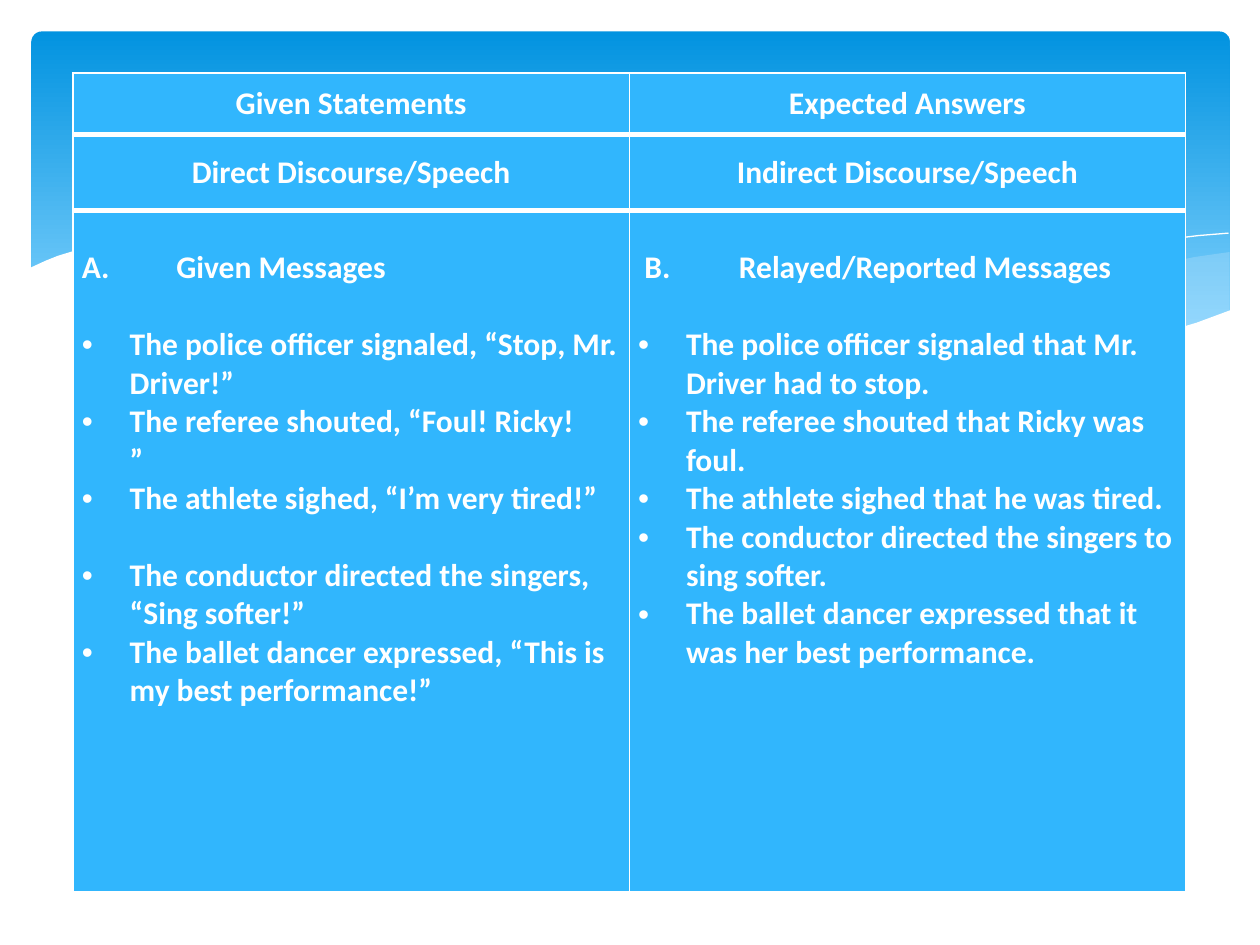
import pptx
import pptx.util
import pptx.dml.color
import pptx.enum.shapes
import pptx.enum.text
import pptx.oxml
import pptx.oxml.ns
from lxml import etree
from pptx.util import Inches

THEME = {
    "font": "Calibri", "size": 18, "text": "FFFFFF", "cell": "31B6FD",
    "band_top": "0293E0", "band_bottom": "83D3FE",
    "wave": "C6E7FC", "white": "FFFFFF", "thin": 1, "thick": 3,
}

HEADERS = [
    ("Given Statements", "Expected Answers"),
    ("Direct Discourse/Speech", "Indirect Discourse/Speech"),
]
MESSAGES = [
    {
        "heading": "A. \tGiven Messages",
        "indent": 0.25,
        "items": [
            "The police officer signaled, “Stop, Mr. Driver!”",
            "The referee shouted, “Foul! Ricky!\v”",
            "The athlete sighed, “I’m very tired!”",
            "The conductor directed the singers, “Sing softer!”",
            "The ballet dancer expressed, “This is my best performance!”",
        ],
        "gap_before": 3,
    },
    {
        "heading": "B. \tRelayed/Reported Messages",
        "indent": 0.3,
        "items": [
            "The police officer signaled that Mr. Driver had to stop.",
            "The referee shouted that Ricky was foul.",
            "The athlete sighed that he was tired.",
            "The conductor directed the singers to sing softer.",
            "The ballet dancer expressed that it was her best performance.",
        ],
        "gap_before": None,
    },
]
TABLE_BOX = (0.58, 0.58, 8.83, 6.5)
ROW_HEIGHTS = (0.49, 0.6, 5.41)
BLANK_LINE = pptx.util.Pt(22)
BULLET_INDENT = 0.38

WAVES = [
    {"fill": THEME["wave"], "opacity": 29, "points": [
        (9.76, 2), (9.48, 2.04), (9.06, 2.13), (8.61, 2.23), (8.05, 2.37),
        (7.53, 2.48), (7.06, 2.57), (6.61, 2.65), (7.05, 2.71), (7.45, 2.75),
        (7.81, 2.77), (8.14, 2.78), (8.44, 2.77), (8.72, 2.74), (8.97, 2.7),
        (9.21, 2.65), (9.42, 2.59), (9.63, 2.52), (9.76, 2.47)]},
    {"fill": THEME["wave"], "opacity": 40, "points": [
        (8.93, 2.73), (8.37, 2.65), (7.75, 2.54), (7.06, 2.4), (6.29, 2.22),
        (5.84, 2.11), (5.41, 2.03), (5.02, 1.96), (4.42, 1.89), (3.99, 1.86),
        (3.61, 1.85), (3.28, 1.87), (2.86, 1.91), (3.42, 1.99), (4.04, 2.11),
        (4.49, 2.22), (5.3, 2.4), (6.01, 2.55), (6.5, 2.64), (6.95, 2.7),
        (7.36, 2.75), (7.73, 2.77), (8.07, 2.78), (8.48, 2.77)]},
    {"line": THEME["white"], "points": [
        (3.09, 1.95), (3.44, 1.9), (3.87, 1.87), (4.33, 1.87), (4.89, 1.9),
        (5.56, 1.97), (6.08, 2.04), (6.65, 2.13), (7.27, 2.26), (7.95, 2.41),
        (8.69, 2.61), (9.07, 2.72)]},
    {"line": THEME["white"], "points": [
        (6.13, 2.57), (6.53, 2.46), (6.95, 2.35), (7.48, 2.23), (8.06, 2.1),
        (8.66, 1.99), (9.1, 1.92), (9.51, 1.87), (9.75, 1.85)]},
    {"fill": THEME["white"], "opacity": 100, "points": [
        (9.77, 2.46), (9.5, 2.56), (9.2, 2.65), (8.87, 2.71), (8.5, 2.75),
        (8.09, 2.77), (7.61, 2.75), (7.08, 2.7), (6.48, 2.62), (5.79, 2.5),
        (5.03, 2.33), (4.47, 2.2), (3.91, 2.07), (3.4, 1.97), (2.92, 1.9),
        (2.5, 1.86), (2.11, 1.84), (1.77, 1.84), (1.46, 1.85), (1.19, 1.87),
        (0.95, 1.91), (0.76, 1.95), (0.59, 1.99), (0.46, 2.03), (0.36, 2.07),
        (0.23, 2.13), (0.23, 3.29), (9.77, 3.29)]},
]


def rgb(value):
    return pptx.dml.color.RGBColor.from_string(value)


def add_child(parent, tag, **attributes):
    return etree.SubElement(parent, pptx.oxml.ns.qn(tag), attributes)


def add_band(page):
    band = page.shapes.add_shape(
        pptx.enum.shapes.MSO_SHAPE.ROUNDED_RECTANGLE,
        Inches(0.25), Inches(0.25), Inches(9.51), Inches(2.7))
    band.adjustments[0] = 0.03
    band.shadow.inherit = False
    band.line.fill.background()
    band.fill.gradient()
    band.fill.gradient_angle = 270
    stops = ((0, THEME["band_top"]), (0.9, THEME["band_bottom"]))
    for stop, (position, color) in zip(band.fill.gradient_stops, stops):
        stop.position = position
        stop.color.rgb = rgb(color)


def add_wave(page, wave):
    points = [(Inches(x), Inches(y)) for x, y in wave["points"]]
    builder = page.shapes.build_freeform(*points[0])
    builder.add_line_segments(points[1:], close="fill" in wave)
    shape = builder.convert_to_shape()
    shape.shadow.inherit = False
    if "line" in wave:
        shape.fill.background()
        shape.line.color.rgb = rgb(wave["line"])
        shape.line.width = pptx.util.Pt(0)
        return
    shape.line.fill.background()
    shape.fill.solid()
    shape.fill.fore_color.rgb = rgb(wave["fill"])
    if wave["opacity"] < 100:
        color = shape.fill._xPr.find(".//" + pptx.oxml.ns.qn("a:srgbClr"))
        add_child(color, "a:alpha", val=str(wave["opacity"] * 1000))


def style_cell(cell, row):
    cell.margin_left = cell.margin_right = Inches(0.07)
    cell.margin_top = cell.margin_bottom = 0
    properties = cell._tc.get_or_add_tcPr()
    widths = {
        "L": THEME["thin"], "R": THEME["thin"],
        "T": THEME["thick"] if row > 0 else THEME["thin"],
        "B": THEME["thick"] if row < len(HEADERS) else THEME["thin"],
    }
    for side, width in widths.items():
        line = add_child(properties, "a:ln" + side, w=str(pptx.util.Pt(width)))
        add_child(add_child(line, "a:solidFill"), "a:srgbClr", val=THEME["white"])
    cell.fill.solid()
    cell.fill.fore_color.rgb = rgb(THEME["cell"])


def write(para, text, align):
    para.text = text
    para.alignment = align
    for span in para.runs:
        span.font.name = THEME["font"]
        span.font.size = pptx.util.Pt(THEME["size"])
        span.font.bold = True
        span.font.color.rgb = rgb(THEME["text"])


def hang(para, margin, indent):
    properties = para._p.get_or_add_pPr()
    properties.set("marL", str(Inches(margin)))
    properties.set("indent", str(-Inches(indent)))
    return properties


def fill_messages(cell, message):
    align = pptx.enum.text.PP_ALIGN
    cell.margin_top = BLANK_LINE
    heading = cell.text_frame.paragraphs[0]
    write(heading, message["heading"], align.JUSTIFY)
    hang(heading, message["indent"], 0.25)
    heading.space_after = BLANK_LINE
    for index, item in enumerate(message["items"]):
        para = cell.text_frame.add_paragraph()
        write(para, item, align.LEFT)
        if index == message["gap_before"]:
            para.space_before = BLANK_LINE
        properties = hang(para, BULLET_INDENT, BULLET_INDENT)
        add_child(properties, "a:buFont", typeface="Arial")
        add_child(properties, "a:buChar", char="•")


def add_discourse_table(page):
    box = [Inches(length) for length in TABLE_BOX]
    table = page.shapes.add_table(len(ROW_HEIGHTS), len(MESSAGES), *box).table
    table.first_row = table.horz_banding = False
    for row, height in enumerate(ROW_HEIGHTS):
        table.rows[row].height = Inches(height)
        for column, message in enumerate(MESSAGES):
            cell = table.cell(row, column)
            style_cell(cell, row)
            if row < len(HEADERS):
                cell.vertical_anchor = pptx.enum.text.MSO_ANCHOR.MIDDLE
                write(cell.text_frame.paragraphs[0], HEADERS[row][column],
                      pptx.enum.text.PP_ALIGN.CENTER)
            else:
                fill_messages(cell, message)


def main():
    deck = pptx.Presentation()
    deck.slide_width, deck.slide_height = Inches(10), Inches(7.5)
    page = deck.slides.add_slide(deck.slide_layouts[6])
    add_band(page)
    for wave in WAVES:
        add_wave(page, wave)
    add_discourse_table(page)
    deck.save("out.pptx")


if __name__ == "__main__":
    main()
